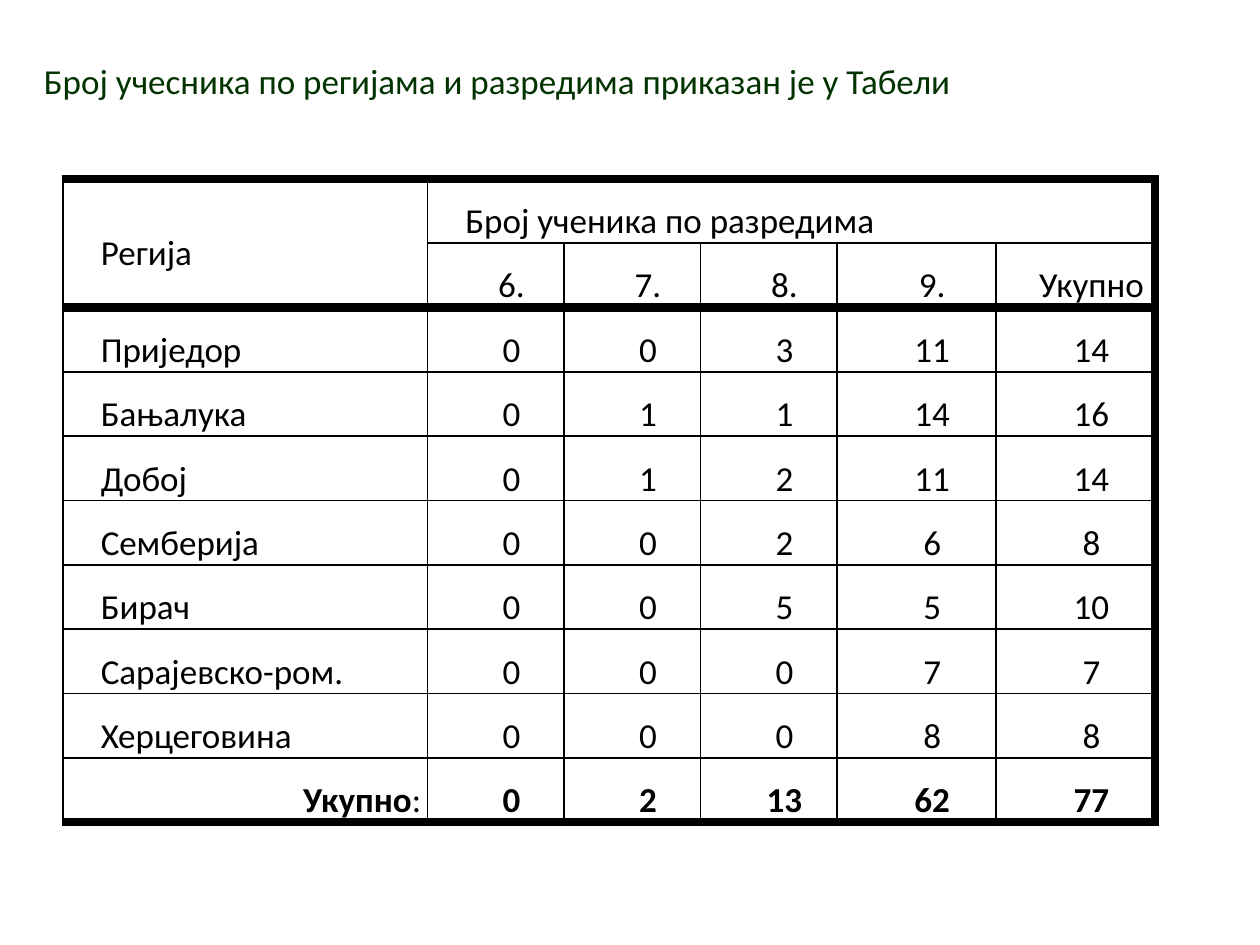
from dataclasses import dataclass

from lxml import etree
from pptx import Presentation
from pptx.dml.color import RGBColor
from pptx.enum import text
from pptx.oxml import ns
from pptx.util import Pt


@dataclass(frozen=True)
class Theme:
    font: str = "Calibri"
    size: float = 20
    title: str = "003300"
    ink: str = "000000"
    thin: float = 1
    thick: float = 5.25


@dataclass(frozen=True)
class Region:
    name: str
    counts: tuple[int, ...]


@dataclass(frozen=True)
class Entry:
    """One table cell; runs are (text, bold) pairs."""
    row: int
    column: int
    runs: tuple[tuple[str, bool], ...]
    align: text.PP_ALIGN = text.PP_ALIGN.CENTER
    row_span: int = 1
    column_span: int = 1
    anchor: text.MSO_ANCHOR = text.MSO_ANCHOR.TOP


THEME = Theme()
LEFT, RIGHT = text.PP_ALIGN.LEFT, text.PP_ALIGN.RIGHT
GRADES = ("6.", "7.", "8.", "9.")
REGIONS = (
    Region("Приједор", (0, 0, 3, 11)),
    Region("Бањалука", (0, 1, 1, 14)),
    Region("Добој", (0, 1, 2, 11)),
    Region("Семберија", (0, 0, 2, 6)),
    Region("Бирач", (0, 0, 5, 5)),
    Region("Сарајевско-ром.", (0, 0, 0, 7)),
    Region("Херцеговина", (0, 0, 0, 8)),
)
HEADER_ROWS = 2
COLUMN_WIDTHS = (208.3, 78, 78, 78, 91, 91)
ROW_HEIGHT = 36
ROW_COUNT = HEADER_ROWS + len(REGIONS) + 1


def set_values(target, values: dict) -> None:
    for name, value in values.items():
        setattr(target, name, value)


def add_run(paragraph, words: str, color: str, bold: bool = False) -> None:
    run = paragraph.add_run()
    run.text = words
    set_values(run.font, {"name": THEME.font, "size": Pt(THEME.size), "bold": bold})
    run.font.color.rgb = RGBColor.from_string(color)


def add_border(cell, side: str, width: float) -> None:
    line = etree.SubElement(cell._tc.get_or_add_tcPr(), ns.qn(f"a:ln{side}"), w=str(Pt(width)))
    fill = etree.SubElement(line, ns.qn("a:solidFill"))
    etree.SubElement(fill, ns.qn("a:srgbClr"), val=THEME.ink)


def frame_cell(cell, row: int, column: int, last_row: int, last_column: int) -> None:
    """Draw thick lines above, under the header, below and at the right; thin ones elsewhere."""
    heavy = {
        "L": False,
        "R": last_column == len(COLUMN_WIDTHS) - 1,
        "T": row in (0, HEADER_ROWS),
        "B": last_row in (HEADER_ROWS - 1, ROW_COUNT - 1),
    }
    for side, is_heavy in heavy.items():
        add_border(cell, side, THEME.thick if is_heavy else THEME.thin)
    cell.fill.background()


def fill_cell(table, entry: Entry) -> None:
    cell = table.cell(entry.row, entry.column)
    set_values(cell, {
        "margin_left": Pt(3.6), "margin_right": Pt(3.6),
        "margin_top": Pt(0), "margin_bottom": Pt(0),
        "vertical_anchor": entry.anchor,
    })
    last_row = entry.row + entry.row_span - 1
    last_column = entry.column + entry.column_span - 1
    if (last_row, last_column) != (entry.row, entry.column):
        cell.merge(table.cell(last_row, last_column))
    for row in range(entry.row, last_row + 1):
        for column in range(entry.column, last_column + 1):
            frame_cell(table.cell(row, column), entry.row, entry.column, last_row, last_column)
    paragraph = cell.text_frame.paragraphs[0]
    set_values(paragraph, {"alignment": entry.align, "line_spacing": 1.5})
    properties = paragraph._p.get_or_add_pPr()
    properties.set("marL", str(Pt(36)))
    properties.set("indent", str(Pt(-18)))
    for words, bold in entry.runs:
        add_run(paragraph, words, THEME.ink, bold)


def table_entries() -> list[Entry]:
    entries = [
        Entry(0, 0, (("Регија", False),), LEFT, row_span=HEADER_ROWS,
              anchor=text.MSO_ANCHOR.MIDDLE),
        Entry(0, 1, (("Број ученика по разредима", False),), LEFT,
              column_span=len(COLUMN_WIDTHS) - 1),
    ]
    for column, label in enumerate((*GRADES, "Укупно"), 1):
        entries.append(Entry(1, column, ((label, False),)))
    totals = tuple(map(sum, zip(*(region.counts for region in REGIONS))))
    labels = [((region.name, False),) for region in REGIONS]
    labels.append((("Укупно", True), (":", False)))
    numbers = [region.counts for region in REGIONS] + [totals]
    for row, (label, counts) in enumerate(zip(labels, numbers), HEADER_ROWS):
        is_total = row == ROW_COUNT - 1
        entries.append(Entry(row, 0, label, RIGHT if is_total else LEFT))
        for column, count in enumerate((*counts, sum(counts)), 1):
            entries.append(Entry(row, column, ((str(count), is_total),)))
    return entries


def add_participant_table(slide) -> None:
    table = slide.shapes.add_table(
        ROW_COUNT, len(COLUMN_WIDTHS), Pt(36), Pt(102.2),
        Pt(sum(COLUMN_WIDTHS)), Pt(ROW_COUNT * ROW_HEIGHT)).table
    set_values(table, {"first_row": False, "horz_banding": False})
    for column, width in zip(table.columns, COLUMN_WIDTHS):
        column.width = Pt(width)
    for row in table.rows:
        row.height = Pt(ROW_HEIGHT)
    for entry in table_entries():
        fill_cell(table, entry)


def add_title(slide) -> None:
    frame = slide.shapes.add_textbox(Pt(18), Pt(30.2), Pt(552), Pt(31.5)).text_frame
    set_values(frame, {"word_wrap": True, "auto_size": text.MSO_AUTO_SIZE.SHAPE_TO_FIT_TEXT})
    add_run(frame.paragraphs[0],
            "Број учесника по регијама и разредима приказан је у Табели", THEME.title)


def main() -> None:
    presentation = Presentation()
    set_values(presentation, {"slide_width": Pt(720), "slide_height": Pt(540)})
    slide = presentation.slides.add_slide(presentation.slide_layouts[6])
    add_participant_table(slide)
    add_title(slide)
    presentation.save("out.pptx")


if __name__ == "__main__":
    main()
